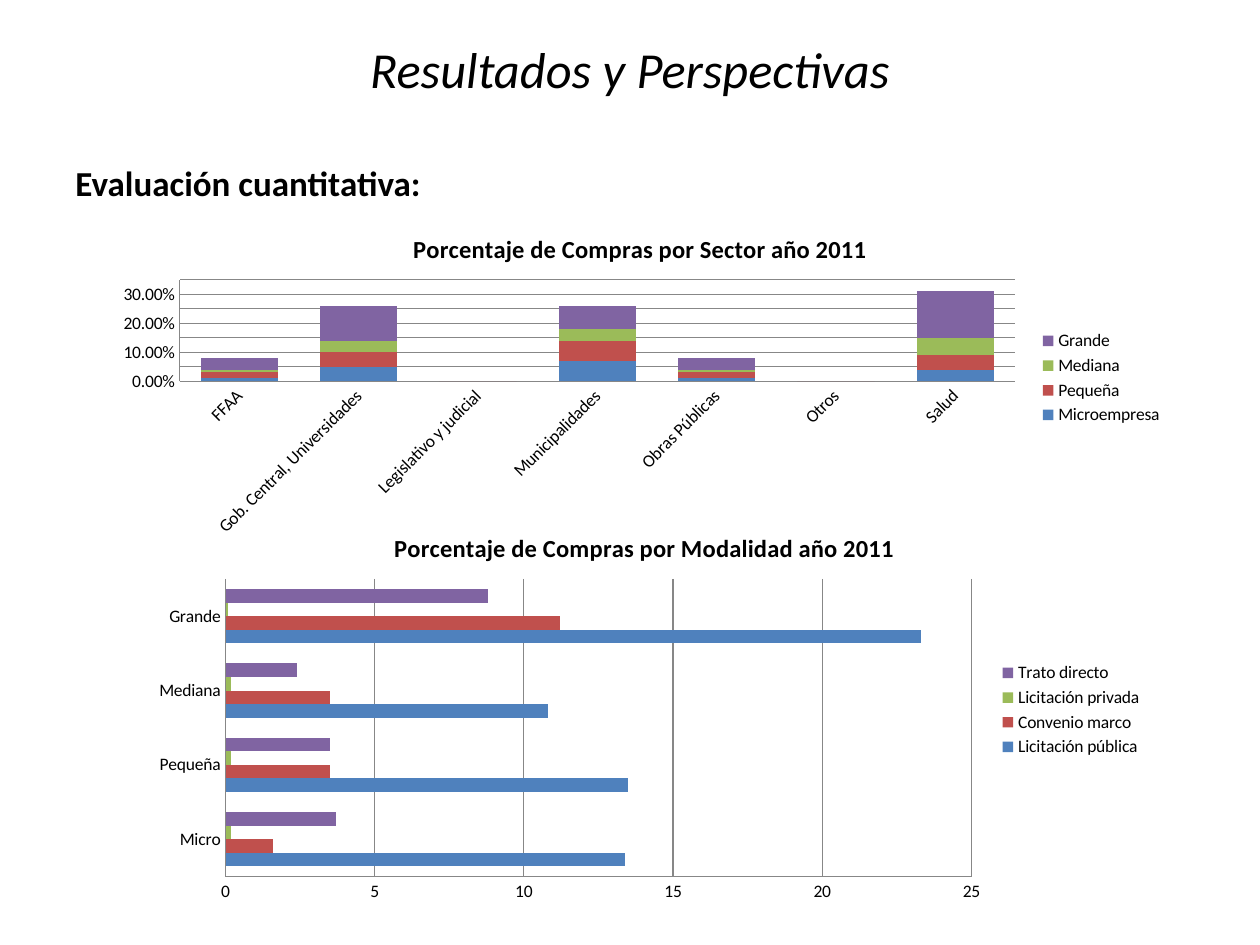
"""Build a slide with two charts of purchases in 2011."""
import pptx
import pptx.util
import pptx.chart.data
import pptx.dml.color
import pptx.enum.chart
import pptx.enum.text
import pptx.oxml
import pptx.oxml.ns

Pt = pptx.util.Pt
kinds = pptx.enum.chart.XL_CHART_TYPE
ticks = pptx.enum.chart.XL_TICK_MARK
anchors = pptx.enum.text.MSO_ANCHOR
aligns = pptx.enum.text.PP_ALIGN


def paint(hue):
    return pptx.dml.color.RGBColor.from_string(hue)


def write(frame, text, size, bold=False, italic=False, align=aligns.LEFT):
    para = frame.paragraphs[0]
    para.alignment = align
    run = para.add_run()
    run.text = text
    font = run.font
    font.name, font.size = "Calibri", Pt(size)
    font.bold, font.italic = bold, italic
    font.color.rgb = paint("000000")


deck = pptx.Presentation()
deck.slide_width, deck.slide_height = Pt(720), Pt(540)
slide = deck.slides.add_slide(deck.slide_layouts[6])

title = slide.shapes.add_textbox(Pt(36), Pt(21.6), Pt(648), Pt(49.7)).text_frame
title.word_wrap = True
title.vertical_anchor = anchors.MIDDLE
title.margin_bottom = Pt(18.6)
write(title, "Resultados y Perspectivas", 28.8, italic=True, align=aligns.CENTER)

body = slide.shapes.add_textbox(Pt(36), Pt(88.6), Pt(648), Pt(393.8)).text_frame
body.word_wrap = True
write(body, "Evaluación cuantitativa:", 20, bold=True)

hues = ["4F81BD", "C0504D", "9BBB59", "8064A2"]
charts = [
    dict(
        kind=kinds.COLUMN_STACKED, box=(59.8, 122.4, 612, 187.2),
        title="Porcentaje de Compras por Sector año 2011",
        cats=["FFAA", "Gob. Central, Universidades", "Legislativo y judicial",
              "Municipalidades", "Obras Públicas", "Otros", "Salud"],
        rows={"Microempresa": [0.01, 0.05, 0, 0.07, 0.01, 0, 0.04],
              "Pequeña": [0.02, 0.05, 0, 0.07, 0.02, 0, 0.05],
              "Mediana": [0.01, 0.04, 0, 0.04, 0.01, 0, 0.06],
              "Grande": [0.04, 0.12, 0, 0.08, 0.04, 0, 0.16]},
        top=0.35, step=0.05, form="0.00%", gap=55, lap=100, turn="-2700000",
        plot=(0.07, 0.2, 0.78, 0.31)),
    dict(
        kind=kinds.BAR_CLUSTERED, box=(76.3, 292.3, 583.9, 226.8),
        title="Porcentaje de Compras por Modalidad año 2011",
        cats=["Micro", "Pequeña", "Mediana", "Grande"],
        rows={"Licitación pública": [13.4, 13.5, 10.8, 23.3],
              "Convenio marco": [1.6, 3.5, 3.5, 11.2],
              "Licitación privada": [0.2, 0.2, 0.2, 0.1],
              "Trato directo": [3.7, 3.5, 2.4, 8.8]},
        top=25, step=5, form="General", gap=150, lap=0, turn="0",
        plot=(0.09, 0.17, 0.73, 0.75)),
]

for item in charts:
    data = pptx.chart.data.CategoryChartData(number_format=item["form"])
    data.categories = item["cats"]
    for name, vals in item["rows"].items():
        data.add_series(name, vals)
    box = [Pt(side) for side in item["box"]]
    chart = slide.shapes.add_chart(item["kind"], *box, data).chart
    chart.font.name, chart.font.size = "Calibri", Pt(10)
    chart.font.color.rgb = paint("000000")
    chart.has_title = True
    write(chart.chart_title.text_frame, item["title"], 14, bold=True,
          align=aligns.CENTER)
    chart.chart_title.include_in_layout = False
    chart.has_legend = True
    chart.legend.position = pptx.enum.chart.XL_LEGEND_POSITION.RIGHT
    chart.legend.include_in_layout = False

    cat, val = chart.category_axis, chart.value_axis
    for axis in (cat, val):
        axis.major_tick_mark = axis.minor_tick_mark = ticks.NONE
        axis.format.line.color.rgb = paint("878787")
        axis.format.line.width = Pt(0.75)
    cat.tick_labels.font.size = Pt(10)
    cat._element.txPr.bodyPr.set("rot", item["turn"])
    val.minimum_scale, val.maximum_scale = 0, item["top"]
    val.major_unit = item["step"]
    val.tick_labels.number_format = item["form"]
    val.tick_labels.number_format_is_linked = False
    val.has_major_gridlines = True
    val.major_gridlines.format.line.color.rgb = paint("878787")
    val.major_gridlines.format.line.width = Pt(0.75)

    plot = chart.plots[0]
    plot.vary_by_categories = False
    plot.gap_width, plot.overlap = item["gap"], item["lap"]
    for row, hue in zip(plot.series, hues):
        row.format.fill.solid()
        row.format.fill.fore_color.rgb = paint(hue)

    area = chart._chartSpace.chart.plotArea
    for old in area.findall(pptx.oxml.ns.qn("c:layout")):
        area.remove(old)
    spots = "".join(f'<c:{key} val="{num}"/>'
                    for key, num in zip("xywh", item["plot"]))
    area.insert(0, pptx.oxml.parse_xml(
        f'<c:layout {pptx.oxml.ns.nsdecls("c")}><c:manualLayout>'
        '<c:layoutTarget val="inner"/><c:xMode val="edge"/><c:yMode val="edge"/>'
        f'{spots}</c:manualLayout></c:layout>'))

deck.save("out.pptx")
